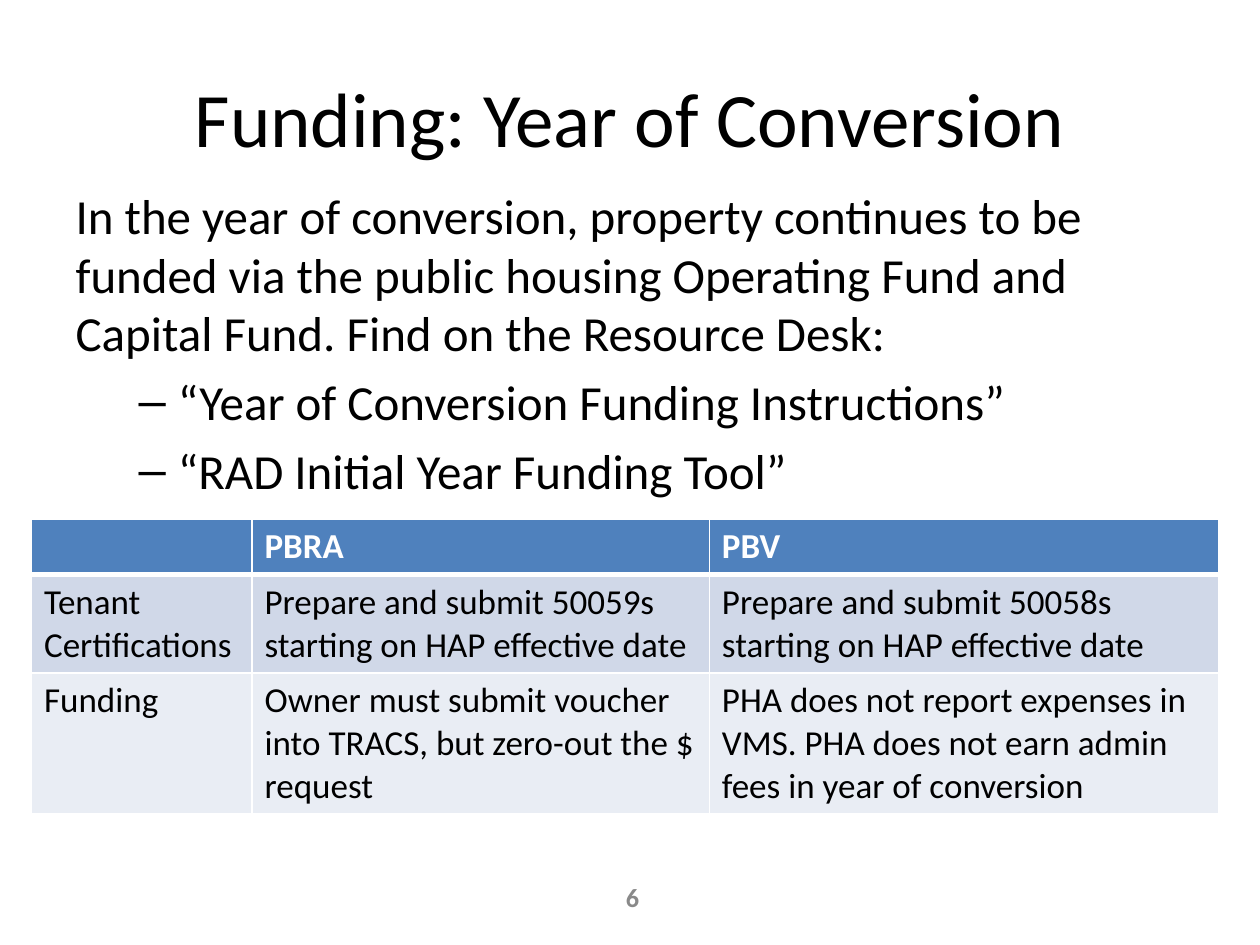
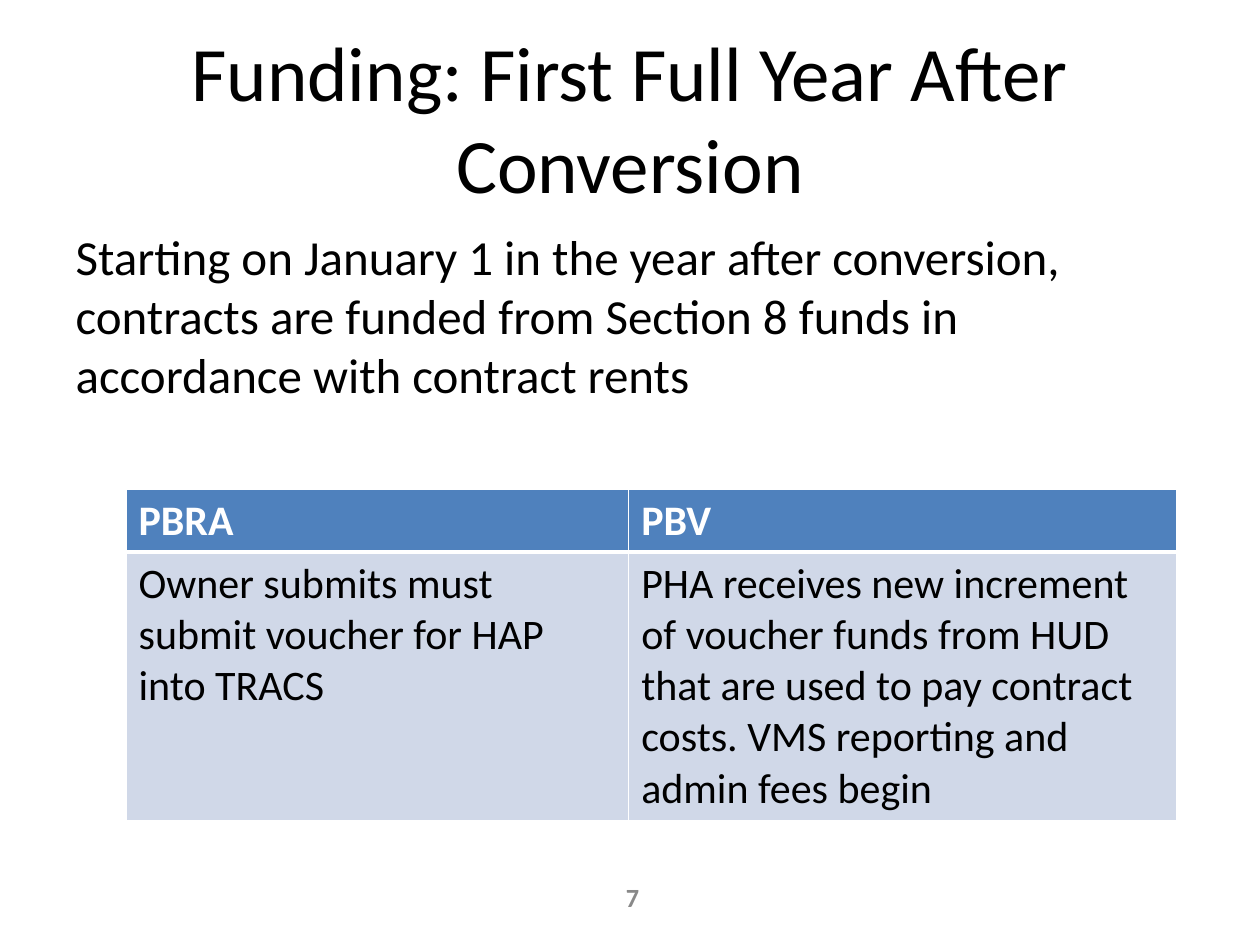
from dataclasses import dataclass

from lxml import etree
from pptx import Presentation
from pptx.dml.color import RGBColor
from pptx.enum.text import MSO_ANCHOR, MSO_AUTO_SIZE, PP_ALIGN
from pptx.oxml.ns import qn
from pptx.util import Inches, Pt

MIDDLE = MSO_ANCHOR.MIDDLE
NO_AUTOFIT = MSO_AUTO_SIZE.NONE
CENTER, RIGHT = PP_ALIGN.CENTER, PP_ALIGN.RIGHT
TITLE_AND_CONTENT = 1


@dataclass(frozen=True)
class Theme:
    """Colours, font and type sizes shared by the slides."""

    font: str = "Calibri"
    text: str = "000000"
    white: str = "FFFFFF"
    number: str = "898989"
    header: str = "4F81BD"
    bands: tuple = ("D0D8E8", "E9EDF4")
    title_size: int = 44
    body_size: int = 28
    number_size: int = 15
    grid_line: int = 1
    header_line: int = 3


THEME = Theme()


def style_paragraph(paragraph, size, color, bold=False):
    """Give the whole paragraph one font."""
    font = paragraph.font
    font.name = THEME.font
    font.size = Pt(size)
    font.bold = bold
    font.color.rgb = RGBColor.from_string(color)


def place(shape, left, top, width, height):
    """Move and size a shape, in inches."""
    shape.left, shape.top = Inches(left), Inches(top)
    shape.width, shape.height = Inches(width), Inches(height)


def remove_bullet(paragraph):
    """Set a list paragraph flush left without a bullet."""
    properties = paragraph._p.get_or_add_pPr()
    properties.set("marL", "0")
    properties.set("indent", "0")
    etree.SubElement(properties, qn("a:buNone"))


def add_title(slide, text):
    """Fill the title placeholder."""
    title = slide.shapes.title
    place(title, 0.5, 0.3, 9, 1.25)
    frame = title.text_frame
    frame.text = text
    frame.auto_size = NO_AUTOFIT
    frame.vertical_anchor = MIDDLE
    paragraph = frame.paragraphs[0]
    paragraph.alignment = CENTER
    style_paragraph(paragraph, THEME.title_size, THEME.text)


def add_body(slide, top, statement, documents=()):
    """Fill the body placeholder with a statement and a dashed list."""
    body = slide.placeholders[1]
    place(body, 0.5, top, 9, 3.67)
    frame = body.text_frame
    frame.text = "\n".join((statement, *documents))
    frame.auto_size = NO_AUTOFIT
    first, *items = frame.paragraphs
    remove_bullet(first)
    first.space_before = Pt(0)
    for item in items:
        item.level = 1
    for paragraph in frame.paragraphs:
        style_paragraph(paragraph, THEME.body_size, THEME.text)


def add_slide_number(slide, number):
    """Write the slide number at the bottom centre."""
    box = slide.shapes.add_textbox(Inches(4.75), Inches(6.92), Inches(0.42), Inches(0.4))
    frame = box.text_frame
    frame.word_wrap = True
    frame.vertical_anchor = MIDDLE
    frame.text = str(number)
    paragraph = frame.paragraphs[0]
    paragraph.alignment = RIGHT
    style_paragraph(paragraph, THEME.number_size, THEME.number, bold=True)


def add_borders(cell, row):
    """Draw white borders, thicker under the header row."""
    widths = dict.fromkeys(("a:lnL", "a:lnR", "a:lnT", "a:lnB"), THEME.grid_line)
    if row < 2:
        widths["a:lnT" if row else "a:lnB"] = THEME.header_line
    properties = cell._tc.get_or_add_tcPr()
    for tag, width in widths.items():
        line = etree.SubElement(properties, qn(tag), w=str(Pt(width)))
        fill = etree.SubElement(line, qn("a:solidFill"))
        etree.SubElement(fill, qn("a:srgbClr"), val=THEME.white)


def fill_cell(cell, row, text, size):
    """Write one cell in the header or band style of its row."""
    is_header = row == 0
    add_borders(cell, row)
    cell.fill.solid()
    fill = THEME.header if is_header else THEME.bands[(row - 1) % 2]
    cell.fill.fore_color.rgb = RGBColor.from_string(fill)
    cell.text = text
    color = THEME.white if is_header else THEME.text
    style_paragraph(cell.text_frame.paragraphs[0], size, color, bold=is_header)


def add_comparison(slide, left, top, widths, heights, size, rows):
    """Add a table that compares the two contract types."""
    table = slide.shapes.add_table(
        len(rows), len(widths), Inches(left), Inches(top),
        Inches(sum(widths)), Inches(sum(heights))).table
    for column, width in zip(table.columns, widths):
        column.width = Inches(width)
    for row, (height, texts) in enumerate(zip(heights, rows)):
        table.rows[row].height = Inches(height)
        for column, text in enumerate(texts):
            fill_cell(table.cell(row, column), row, text, size)


def add_funding_slide(presentation, number, title):
    """Add a slide with its title and number."""
    slide = presentation.slides.add_slide(presentation.slide_layouts[TITLE_AND_CONTENT])
    add_title(slide, title)
    add_slide_number(slide, number)
    return slide


def main():
    """Build the two funding slides."""
    presentation = Presentation()
    presentation.slide_width, presentation.slide_height = Inches(10), Inches(7.5)

    conversion = add_funding_slide(presentation, 6, "Funding: Year of Conversion")
    add_body(
        conversion, 1.42,
        "In the year of conversion, property continues to be funded via the public "
        "housing Operating Fund and Capital Fund. Find on the Resource Desk:",
        ("“Year of Conversion Funding Instructions”", "“RAD Initial Year Funding Tool”"))
    add_comparison(
        conversion, 0.25, 4.12, (1.75, 3.63, 4.04), (0.44, 0.78, 1.12), 20,
        (("", "PBRA", "PBV"),
         ("Tenant Certifications",
          "Prepare and submit 50059s starting on HAP effective date",
          "Prepare and submit 50058s starting on HAP effective date"),
         ("Funding",
          "Owner must submit voucher into TRACS, but zero-out the $ request",
          "PHA does not report expenses in VMS. PHA does not earn admin fees "
          "in year of conversion")))

    first_year = add_funding_slide(
        presentation, 7, "Funding: First Full Year After Conversion")
    add_body(
        first_year, 1.75,
        "Starting on January 1 in the year after conversion, contracts are funded "
        "from Section 8 funds in accordance with contract rents")
    add_comparison(
        first_year, 1, 3.88, (3.99, 4.35), (0.5, 2.13), 24,
        (("PBRA", "PBV"),
         ("Owner submits must submit voucher for HAP into TRACS",
          "PHA receives new increment of voucher funds from HUD that are used to pay "
          "contract costs. VMS reporting and admin fees begin")))

    presentation.save("out.pptx")


if __name__ == "__main__":
    main()
